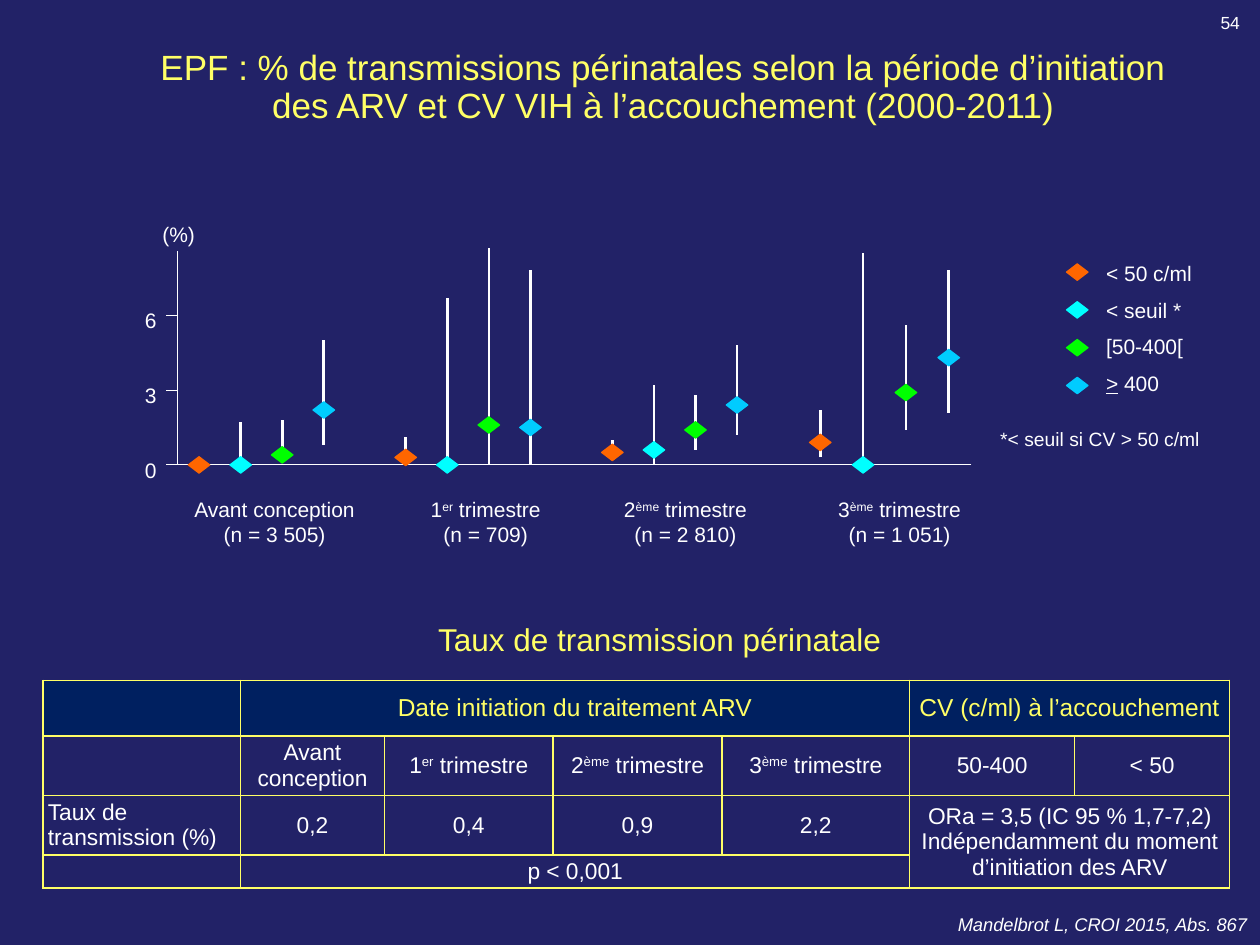
from pptx import Presentation
from pptx.dml.color import RGBColor
from pptx.enum.shapes import MSO_CONNECTOR, MSO_SHAPE
from pptx.enum.text import MSO_ANCHOR, PP_ALIGN
from pptx.oxml.ns import qn
from pptx.util import Inches, Pt
from lxml.etree import SubElement

NAVY = RGBColor(0x22, 0x22, 0x67)
HEADER = RGBColor(0x00, 0x20, 0x60)
YELLOW = RGBColor(0xFF, 0xFF, 0x66)
WHITE = RGBColor(0xFF, 0xFF, 0xFF)
ORANGE = RGBColor(0xFF, 0x66, 0x00)
CYAN = RGBColor(0x00, 0xFF, 0xFF)
GREEN = RGBColor(0x00, 0xFF, 0x00)
BLUE = RGBColor(0x00, 0xCC, 0xFF)

TITLE = ("EPF : % de transmissions périnatales selon la période d’initiation "
         "des ARV et CV VIH à l’accouchement (2000-2011)")
SERIES = [("< 50 c/ml", ORANGE), ("< seuil *", CYAN), ("[50-400[", GREEN), ("^>^ 400", BLUE)]
LEGEND_WIDTHS = [0.89, 0.8, 0.82, 0.63]
TICKS = [0, 3, 6]

# label, label left, label width, first x, step, (value, low, high) per series
PERIODS = [
    (["Avant conception", "(n = 3 505)"], 1.43, 1.5, 1.58, 0.33,
     [(0, 0, 0), (0, 0, 1.7), (0.4, 0.2, 1.8), (2.2, 0.8, 5.0)]),
    (["1^er^ trimestre", "(n = 709)"], 3.28, 1.15, 3.22, 0.33,
     [(0.3, 0, 1.1), (0, 0, 6.7), (1.6, 0, 8.7), (1.5, 0, 7.8)]),
    (["2^ème^ trimestre", "(n = 2 810)"], 4.83, 1.22, 4.86, 0.33,
     [(0.5, 0.3, 1.0), (0.6, 0, 3.2), (1.4, 0.6, 2.8), (2.4, 1.2, 4.8)]),
    (["3^ème^ trimestre", "(n = 1 051)"], 6.53, 1.22, 6.51, 0.34,
     [(0.9, 0.3, 2.2), (0, 0, 8.5), (2.9, 1.4, 5.6), (4.3, 2.1, 7.8)]),
]

COLUMN_WIDTHS = [1.57, 1.14, 1.34, 1.34, 1.49, 1.31, 1.23]
ROW_HEIGHTS = [0.44, 0.47, 0.47, 0.26]
TABLE_ROWS = [
    ["", "Date initiation du traitement ARV", "", "", "", "CV (c/ml) à l’accouchement", ""],
    ["", "Avant conception", "1^er^ trimestre", "2^ème^ trimestre", "3^ème^ trimestre",
     "50-400", "< 50"],
    ["Taux de transmission (%)", "0,2", "0,4", "0,9", "2,2",
     "ORa = 3,5 (IC 95 % 1,7-7,2)\nIndépendamment du moment d’initiation des ARV", ""],
    ["", "p < 0,001", "", "", "", "", ""],
]
MERGES = [((0, 1), (0, 4)), ((0, 5), (0, 6)), ((2, 5), (3, 6)), ((3, 1), (3, 4))]

AXIS_LEFT, AXIS_RIGHT, AXIS_TOP, BASELINE = 1.41, 7.71, 1.99, 3.69
INCHES_PER_POINT = 0.198
DIAMOND_WIDTH, DIAMOND_HEIGHT = 0.17, 0.13


def height_of(value):
    return BASELINE - value * INCHES_PER_POINT


def write_text(frame, lines, size=12, color=WHITE, align=PP_ALIGN.LEFT, italic=False,
               underline_marked=False, line_spacing=None):
    for index, line in enumerate(lines):
        paragraph = frame.paragraphs[0] if index == 0 else frame.add_paragraph()
        paragraph.alignment = align
        if line_spacing:
            paragraph.line_spacing = line_spacing
        for position, piece in enumerate(line.split("^")):
            if not piece:
                continue
            run = paragraph.add_run()
            run.text = piece
            run.font.name = "Arial"
            run.font.size = Pt(size)
            run.font.bold = False
            run.font.italic = italic
            run.font.color.rgb = color
            if position % 2 and underline_marked:
                run.font.underline = True
            elif position % 2:
                run.font._element.set("baseline", "30000")
        if not line:
            paragraph._p.get_or_add_endParaRPr().set("sz", str(size * 100))


def add_text(slide, lines, left, top, width, height, wrap=False, **text_format):
    box = slide.shapes.add_textbox(Inches(left), Inches(top), Inches(width), Inches(height))
    box.text_frame.word_wrap = wrap
    write_text(box.text_frame, lines, **text_format)
    return box


def add_line(slide, x1, y1, x2, y2, width):
    line = slide.shapes.add_connector(
        MSO_CONNECTOR.STRAIGHT, Inches(x1), Inches(y1), Inches(x2), Inches(y2))
    line.line.color.rgb = WHITE
    line.line.width = Pt(width)
    SubElement(line._element.spPr, qn("a:effectLst"))


def add_diamond(slide, x, y, color):
    diamond = slide.shapes.add_shape(
        MSO_SHAPE.DIAMOND, Inches(x - DIAMOND_WIDTH / 2), Inches(y - DIAMOND_HEIGHT / 2),
        Inches(DIAMOND_WIDTH), Inches(DIAMOND_HEIGHT))
    diamond.shadow.inherit = False
    diamond.fill.solid()
    diamond.fill.fore_color.rgb = color
    diamond.line.color.rgb = color
    diamond.line.width = Pt(0)


def add_title(slide):
    title = add_text(slide, [TITLE], 1.15, 0.3, 8.23, 1.02, wrap=True, size=20,
                     color=YELLOW, align=PP_ALIGN.CENTER, line_spacing=0.9)
    title.text_frame.margin_top = Inches(0.1)
    properties = title.text_frame.paragraphs[0].runs[0].font._element
    effects = properties.makeelement(qn("a:effectLst"), {})
    properties.find(qn("a:solidFill")).addnext(effects)
    shadow = SubElement(effects, qn("a:outerShdw"), dist="35921", dir="2700000")
    SubElement(shadow, qn("a:srgbClr"), val="000000")


def add_plot(slide):
    builder = slide.shapes.build_freeform(Inches(AXIS_RIGHT), Inches(BASELINE))
    builder.add_line_segments(
        [(Inches(AXIS_LEFT), Inches(BASELINE)), (Inches(AXIS_LEFT), Inches(AXIS_TOP))],
        close=False)
    axes = builder.convert_to_shape()
    axes.shadow.inherit = False
    axes.fill.background()
    axes.line.color.rgb = WHITE
    axes.line.width = Pt(0.5)

    for tick in TICKS:
        y = height_of(tick)
        add_line(slide, AXIS_LEFT - 0.09, y, AXIS_LEFT, y, 0.5)
        add_text(slide, [str(tick)], 1.04, y - 0.11, 0.3, 0.23, align=PP_ALIGN.RIGHT)

    for label, label_left, label_width, first_x, step, points in PERIODS:
        for index, (value, low, high) in enumerate(points):
            x = first_x + index * step
            if high > low:
                add_line(slide, x, height_of(low), x, height_of(high), 1.5)
            add_diamond(slide, x, height_of(value), SERIES[index][1])
        add_text(slide, label, label_left, 3.89, label_width, 0.38, align=PP_ALIGN.CENTER)

    for index, (name, color) in enumerate(SERIES):
        add_diamond(slide, 8.55, 2.16 + index * 0.3, color)
        add_text(slide, [name], 8.68, 2.02 + index * 0.29, LEGEND_WIDTHS[index], 0.3,
                 underline_marked=True)
    add_text(slide, ["(%)"], 1.19, 1.71, 0.47, 0.3)
    add_text(slide, ["*< seuil si CV > 50 c/ml"], 7.84, 3.34, 1.8, 0.22, size=11)


def style_cell(cell, is_header):
    cell.margin_left = cell.margin_right = Inches(0.04)
    cell.margin_top = cell.margin_bottom = Inches(0.02)
    cell.vertical_anchor = MSO_ANCHOR.MIDDLE
    properties = cell._tc.get_or_add_tcPr()
    for side in ("a:lnL", "a:lnR", "a:lnT", "a:lnB"):
        border = SubElement(properties, qn(side), w=str(Pt(1)))
        SubElement(SubElement(border, qn("a:solidFill")), qn("a:srgbClr"), val=str(YELLOW))
    if is_header:
        cell.fill.solid()
        cell.fill.fore_color.rgb = HEADER
    else:
        cell.fill.background()


def add_rate_table(slide):
    table = slide.shapes.add_table(
        len(ROW_HEIGHTS), len(COLUMN_WIDTHS), Inches(0.34), Inches(5.4),
        Inches(sum(COLUMN_WIDTHS)), Inches(sum(ROW_HEIGHTS))).table
    table.first_row = table.horz_banding = False
    for column, width in zip(table.columns, COLUMN_WIDTHS):
        column.width = Inches(width)
    for row, height in zip(table.rows, ROW_HEIGHTS):
        row.height = Inches(height)
    for row_index, texts in enumerate(TABLE_ROWS):
        is_header = row_index == 0
        for column_index, text in enumerate(texts):
            cell = table.cell(row_index, column_index)
            style_cell(cell, is_header)
            write_text(cell.text_frame, text.split("\n"), size=14 if is_header else 13,
                       color=YELLOW if is_header else WHITE,
                       align=PP_ALIGN.CENTER if column_index else PP_ALIGN.LEFT)
    for first, last in MERGES:
        table.cell(*first).merge(table.cell(*last))


def main():
    presentation = Presentation()
    presentation.slide_width, presentation.slide_height = Inches(10), Inches(7.5)
    slide = presentation.slides.add_slide(presentation.slide_layouts[6])
    slide.background.fill.solid()
    slide.background.fill.fore_color.rgb = NAVY
    add_title(slide)
    add_text(slide, ["Mandelbrot L, CROI 2015, Abs. 867"], 6.93, 7.2, 3.07, 0.29,
             wrap=True, size=10.5, italic=True, align=PP_ALIGN.RIGHT)
    add_plot(slide)
    add_text(slide, ["Taux de transmission périnatale"], 1.44, 4.87, 7.59, 0.4,
             wrap=True, size=18, color=YELLOW, align=PP_ALIGN.CENTER)
    add_text(slide, ["54"], 9.58, 0.05, 0.36, 0.27, size=10, align=PP_ALIGN.RIGHT)
    add_rate_table(slide)
    presentation.save("out.pptx")


if __name__ == "__main__":
    main()
